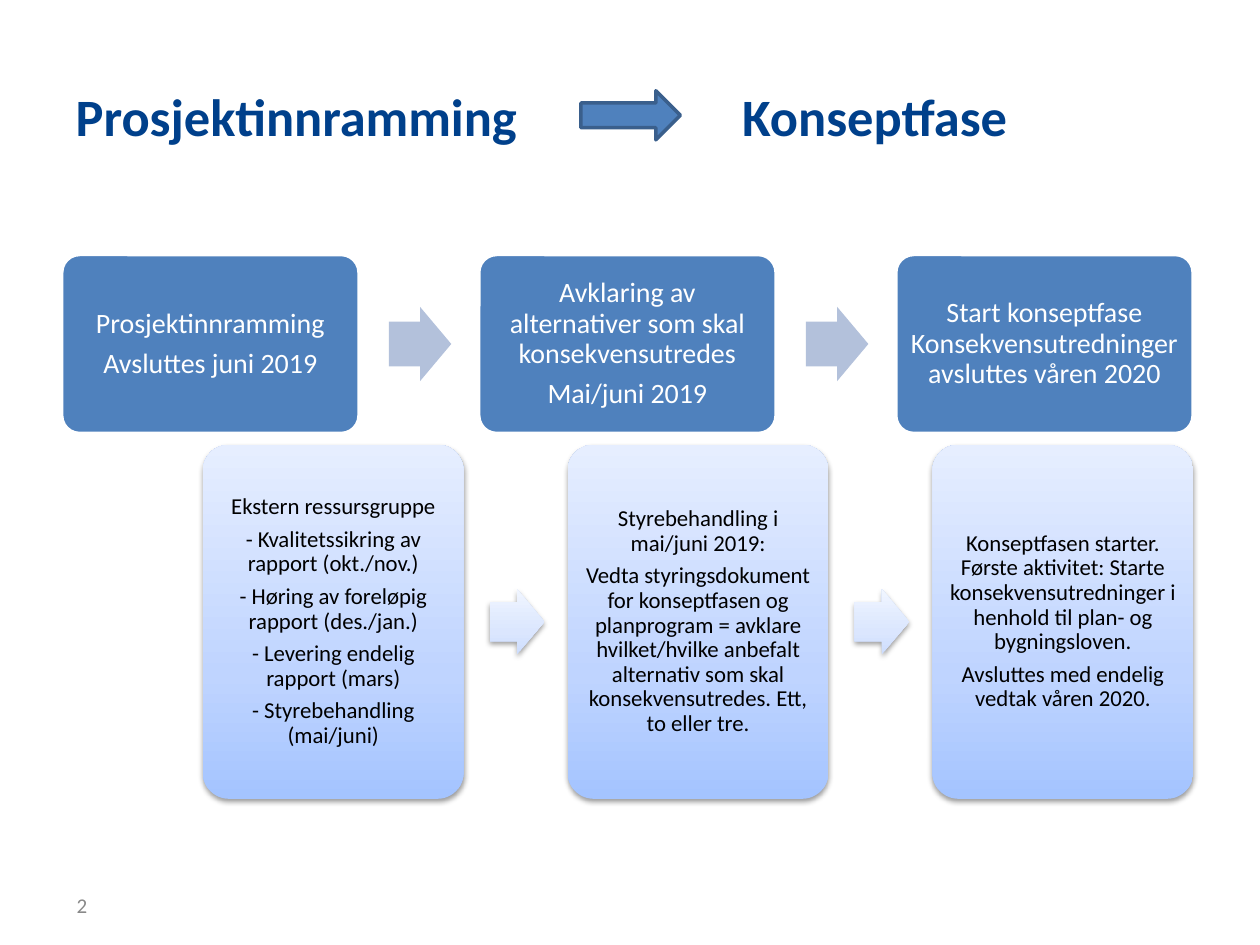
from lxml import etree
from pptx import Presentation
from pptx import util as u
from pptx.dml import color
from pptx.enum import shapes, text
from pptx.oxml import ns

COLORS = {
    "title": "00408B",
    "blue": "4F81BD",
    "blue_edge": "3A5F8C",
    "pale_arrow": "B3C1DB",
    "white": "FFFFFF",
    "black": "000000",
    "grey": "898989",
}
CARD_GRADIENT = [(0, "A4C4FF"), (35, "BFD4FF"), (100, "E6EEFF")]
ARROW_GRADIENT = [(0, "CDDDFE"), (35, "DBE6FE"), (100, "F0F5FF")]

PHASES = [
    ["Prosjektinnramming", "Avsluttes juni 2019"],
    ["Avklaring av alternativer som skal konsekvensutredes", "Mai/juni 2019"],
    ["Start konseptfase\nKonsekvensutredninger avsluttes våren 2020"],
]
ACTIVITIES = [
    [
        "Ekstern ressursgruppe",
        "- Kvalitetssikring av rapport (okt./nov.)",
        "- Høring av foreløpig rapport (des./jan.)",
        "- Levering endelig rapport (mars)",
        "- Styrebehandling\n(mai/juni)",
    ],
    [
        "Styrebehandling i mai/juni 2019:",
        "Vedta styringsdokument for konseptfasen og planprogram = avklare "
        "hvilket/hvilke anbefalt alternativ som skal konsekvensutredes. "
        "Ett, to eller tre.",
    ],
    [
        "Konseptfasen starter. Første aktivitet: Starte konsekvensutredninger "
        "i henhold til plan- og bygningsloven.",
        "Avsluttes med endelig vedtak våren 2020.",
    ],
]


def rgb(name):
    return color.RGBColor.from_string(COLORS[name])


def add_element(parent, tag, **attributes):
    element = etree.SubElement(parent, ns.qn(tag))
    for name, value in attributes.items():
        element.set(name, str(value))
    return element


def write_text(frame, paragraphs, size, font_color, bold=False, inset=None,
               align=text.PP_ALIGN.LEFT, line_spacing=1.0, space_after=0):
    frame.word_wrap = True
    frame.auto_size = text.MSO_AUTO_SIZE.NONE
    frame.vertical_anchor = text.MSO_ANCHOR.MIDDLE
    if inset is not None:
        frame.margin_left = frame.margin_right = u.Inches(inset)
        frame.margin_top = frame.margin_bottom = u.Inches(inset)
    for index, content in enumerate(paragraphs):
        paragraph = frame.add_paragraph() if index else frame.paragraphs[0]
        paragraph.text = content.replace("\n", "\v")
        paragraph.alignment = align
        paragraph.line_spacing = line_spacing
        paragraph.space_after = u.Pt(space_after)
        for run in paragraph.runs:
            run.font.name = "Calibri"
            run.font.size = u.Pt(size)
            run.font.bold = bold
            run.font.color.rgb = rgb(font_color)


def add_gradient(shape, stops):
    shape.fill.gradient()
    shape.fill.gradient_angle = 90
    stop_list = shape.fill._fill._gradFill.find(ns.qn("a:gsLst"))
    for stop in list(stop_list):
        stop_list.remove(stop)
    for position, value in stops:
        stop = add_element(stop_list, "a:gs", pos=position * 1000)
        add_element(stop, "a:srgbClr", val=value)


def add_soft_shadow(shape):
    effects = shape._element.spPr.find(ns.qn("a:effectLst"))
    shadow = add_element(effects, "a:outerShdw", blurRad=u.Pt(3.1), dist=u.Pt(1.6),
                         dir=5400000, rotWithShape=0)
    shade = add_element(shadow, "a:srgbClr", val=COLORS["black"])
    add_element(shade, "a:alpha", val=38000)


def add_block(slide, kind, box, fill, line=None, adjustments=()):
    shape = slide.shapes.add_shape(kind, *map(u.Inches, box))
    for index, value in enumerate(adjustments):
        shape.adjustments[index] = value
    if line:
        shape.line.color.rgb = rgb(line)
        shape.line.width = u.Pt(2)
    else:
        shape.line.fill.background()
    shape.shadow.inherit = False
    if isinstance(fill, list):
        add_gradient(shape, fill)
        add_soft_shadow(shape)
    else:
        shape.fill.solid()
        shape.fill.fore_color.rgb = rgb(fill)
    return shape


def add_heading(slide, box):
    title = slide.shapes.title
    title.left, title.top, title.width, title.height = map(u.Inches, box)
    write_text(title.text_frame, ["Prosjektinnramming\tKonseptfase"], 30, "title", bold=True)
    properties = title.text_frame.paragraphs[0]._p.get_or_add_pPr()
    tabs = add_element(properties, "a:tabLst")
    add_element(tabs, "a:tab", pos=u.Inches(5.29), algn="l")
    left, top, width, height = box
    add_block(slide, shapes.MSO_SHAPE.RIGHT_ARROW, (left + 4.11, top + 0.2, 0.79, 0.39),
              "blue", line="blue_edge")


def add_process(slide, box, cards, card_width, card_fill, arrow_fill, size,
                font_color, inset, line=None):
    left, top, width, height = box
    pitch = (width - card_width) / (len(cards) - 1)
    arrow_width, arrow_height = 0.21 * card_width, 0.25 * card_width
    for index, paragraphs in enumerate(cards):
        card_left = left + index * pitch
        if index:
            arrow_left = card_left - pitch + 1.1 * card_width
            arrow_top = top + (height - arrow_height) / 2
            add_block(slide, shapes.MSO_SHAPE.RIGHT_ARROW,
                      (arrow_left, arrow_top, arrow_width, arrow_height),
                      arrow_fill, adjustments=(0.6, 0.5))
        card = add_block(slide, shapes.MSO_SHAPE.ROUNDED_RECTANGLE,
                         (card_left, top, card_width, height),
                         card_fill, line=line, adjustments=(0.1,))
        write_text(card.text_frame, paragraphs, size, font_color, inset=inset,
                   align=text.PP_ALIGN.CENTER, line_spacing=0.9, space_after=0.35 * size)


def add_page_number(slide, box):
    number = slide.shapes.add_textbox(*map(u.Inches, box))
    write_text(number.text_frame, ["2"], 12, "grey")


def main():
    presentation = Presentation()
    presentation.slide_width = u.Inches(10)
    presentation.slide_height = u.Inches(7.5)
    slide = presentation.slides.add_slide(presentation.slide_layouts[5])
    add_heading(slide, (0.5, 0.52, 9, 0.79))
    add_process(slide, (0.49, 2.02, 8.98, 1.42), PHASES, 2.36, "blue", "pale_arrow",
                size=16, font_color="white", inset=0.07, line="white")
    add_process(slide, (1.61, 3.53, 7.86, 2.81), ACTIVITIES, 2.07, CARD_GRADIENT,
                ARROW_GRADIENT, size=13, font_color="black", inset=0.05)
    add_page_number(slide, (0.51, 6.98, 2.33, 0.4))
    presentation.save("out.pptx")


if __name__ == "__main__":
    main()
